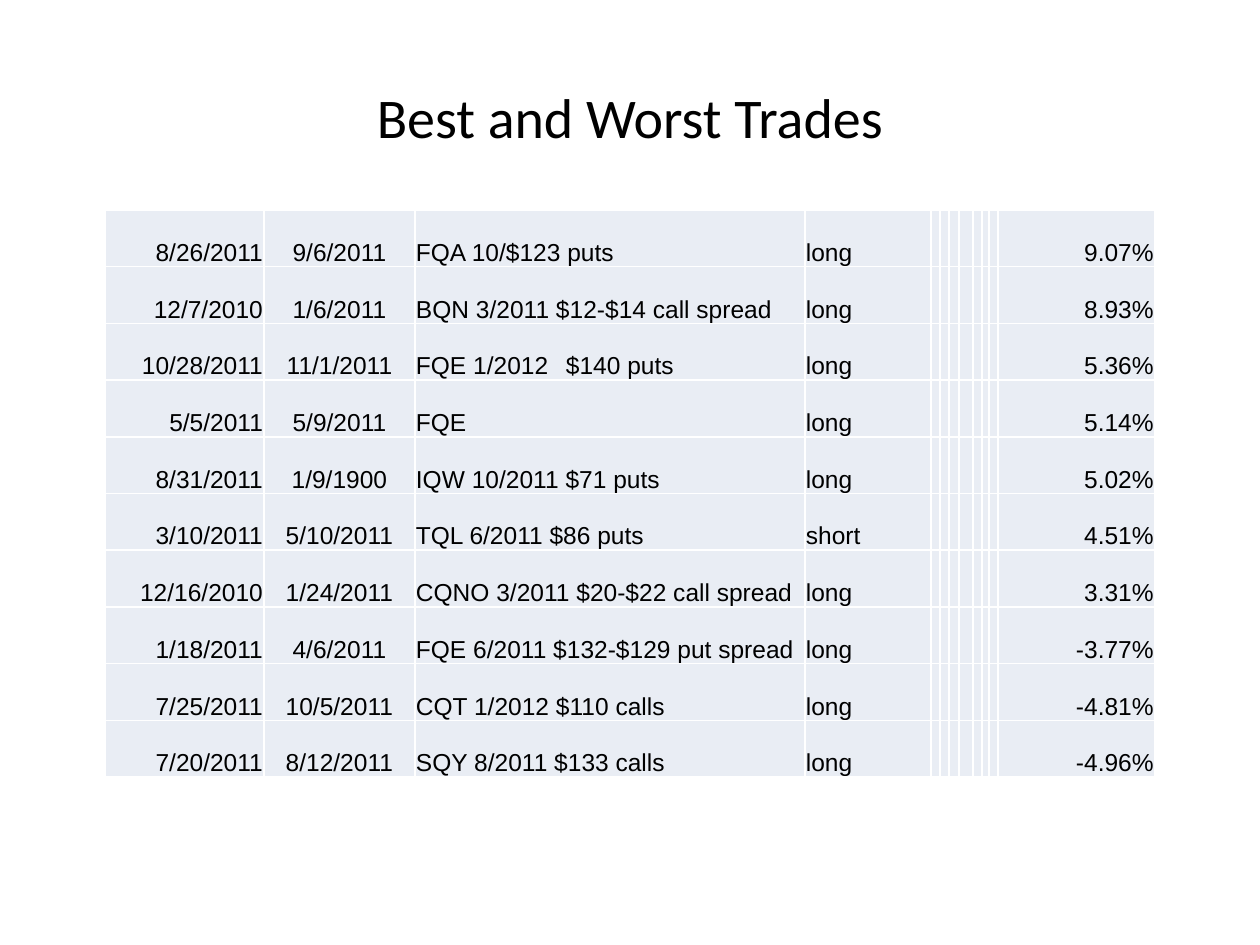
from dataclasses import dataclass

from lxml.etree import SubElement
from pptx import Presentation
from pptx.dml.color import RGBColor
from pptx.enum.text import MSO_ANCHOR, PP_ALIGN
from pptx.oxml.ns import qn
from pptx.util import Emu, Pt

EMU_PER_PX = 914400 / 126


@dataclass(frozen=True)
class Theme:
    ink: str = "000000"
    cell: str = "E9EDF4"
    rule: str = "FFFFFF"
    title_font: str = "Calibri"
    body_font: str = "Arial"
    title_size: int = 32
    body_size: int = 14
    rule_width: int = 1


THEME = Theme()

TRADES = [
    ("8/26/2011", "9/6/2011", "FQA 10/$123 puts", "long", "9.07%"),
    ("12/7/2010", "1/6/2011", "BQN 3/2011 $12-$14 call spread", "long", "8.93%"),
    ("10/28/2011", "11/1/2011", "FQE 1/2012\t$140 puts", "long", "5.36%"),
    ("5/5/2011", "5/9/2011", "FQE", "long", "5.14%"),
    ("8/31/2011", "1/9/1900", "IQW 10/2011 $71 puts", "long", "5.02%"),
    ("3/10/2011", "5/10/2011", "TQL 6/2011 $86 puts", "short", "4.51%"),
    ("12/16/2010", "1/24/2011", "CQNO 3/2011 $20-$22 call spread", "long", "3.31%"),
    ("1/18/2011", "4/6/2011", "FQE 6/2011 $132-$129 put spread", "long", "-3.77%"),
    ("7/25/2011", "10/5/2011", "CQT 1/2012 $110 calls", "long", "-4.81%"),
    ("7/20/2011", "8/12/2011", "SQY 8/2011 $133 calls", "long", "-4.96%"),
]
COL_WIDTHS = [159, 151, 390, 126, 9, 9, 10, 14, 9, 7, 9, 157]
# Table column of each trade field; the narrow columns between stay empty
FIELD_COLS = [0, 1, 2, 3, 11]
FIELD_ALIGNS = [PP_ALIGN.RIGHT, PP_ALIGN.CENTER, PP_ALIGN.LEFT,
                PP_ALIGN.LEFT, PP_ALIGN.RIGHT]
PRICE_TAB = 150


def px(n):
    return Emu(round(n * EMU_PER_PX))


def style_text(p, font, size, align):
    p.alignment = align
    for r in p.runs:
        r.font.name = font
        r.font.size = Pt(size)
        r.font.color.rgb = RGBColor.from_string(THEME.ink)


def add_tab_stop(p, position):
    tabs = SubElement(p._p.get_or_add_pPr(), qn("a:tabLst"))
    SubElement(tabs, qn("a:tab"), pos=str(px(position)), algn="l")


def style_cell(cell):
    cell.margin_left = cell.margin_right = cell.margin_top = px(1)
    cell.margin_bottom = 0
    cell.vertical_anchor = MSO_ANCHOR.BOTTOM
    tc_pr = cell._tc.get_or_add_tcPr()
    for side in ("lnL", "lnR", "lnT", "lnB"):
        ln = SubElement(tc_pr, qn(f"a:{side}"), w=str(Pt(THEME.rule_width)))
        fill = SubElement(ln, qn("a:solidFill"))
        SubElement(fill, qn("a:srgbClr"), val=THEME.rule)
    cell.fill.solid()
    cell.fill.fore_color.rgb = RGBColor.from_string(THEME.cell)


def add_title(s, x, y, w, h):
    tf = s.shapes.add_textbox(px(x), px(y), px(w), px(h)).text_frame
    tf.word_wrap = True
    tf.vertical_anchor = MSO_ANCHOR.MIDDLE
    tf.text = "Best and Worst Trades"
    style_text(tf.paragraphs[0], THEME.title_font, THEME.title_size, PP_ALIGN.CENTER)


def add_trades_table(s, x, y, w, h):
    table = s.shapes.add_table(len(TRADES), len(COL_WIDTHS),
                               px(x), px(y), px(w), px(h)).table
    table.first_row = table.horz_banding = False
    for col, width in zip(table.columns, COL_WIDTHS):
        col.width = px(w * width / sum(COL_WIDTHS))
    for row in table.rows:
        row.height = px(h / len(TRADES))
    for cell in table.iter_cells():
        style_cell(cell)

    # Trade details
    for i, trade in enumerate(TRADES):
        for col, align, text in zip(FIELD_COLS, FIELD_ALIGNS, trade):
            p = table.cell(i, col).text_frame.paragraphs[0]
            p.text = text
            style_text(p, THEME.body_font, THEME.body_size, align)
            if "\t" in text:
                add_tab_stop(p, PRICE_TAB)


def main():
    prs = Presentation()
    prs.slide_width, prs.slide_height = px(1260), px(945)
    s = prs.slides.add_slide(prs.slide_layouts[6])
    add_title(s, 63, 38, 1134, 157)
    add_trades_table(s, 105, 210, 1050, 567)
    prs.save("out.pptx")


if __name__ == "__main__":
    main()
